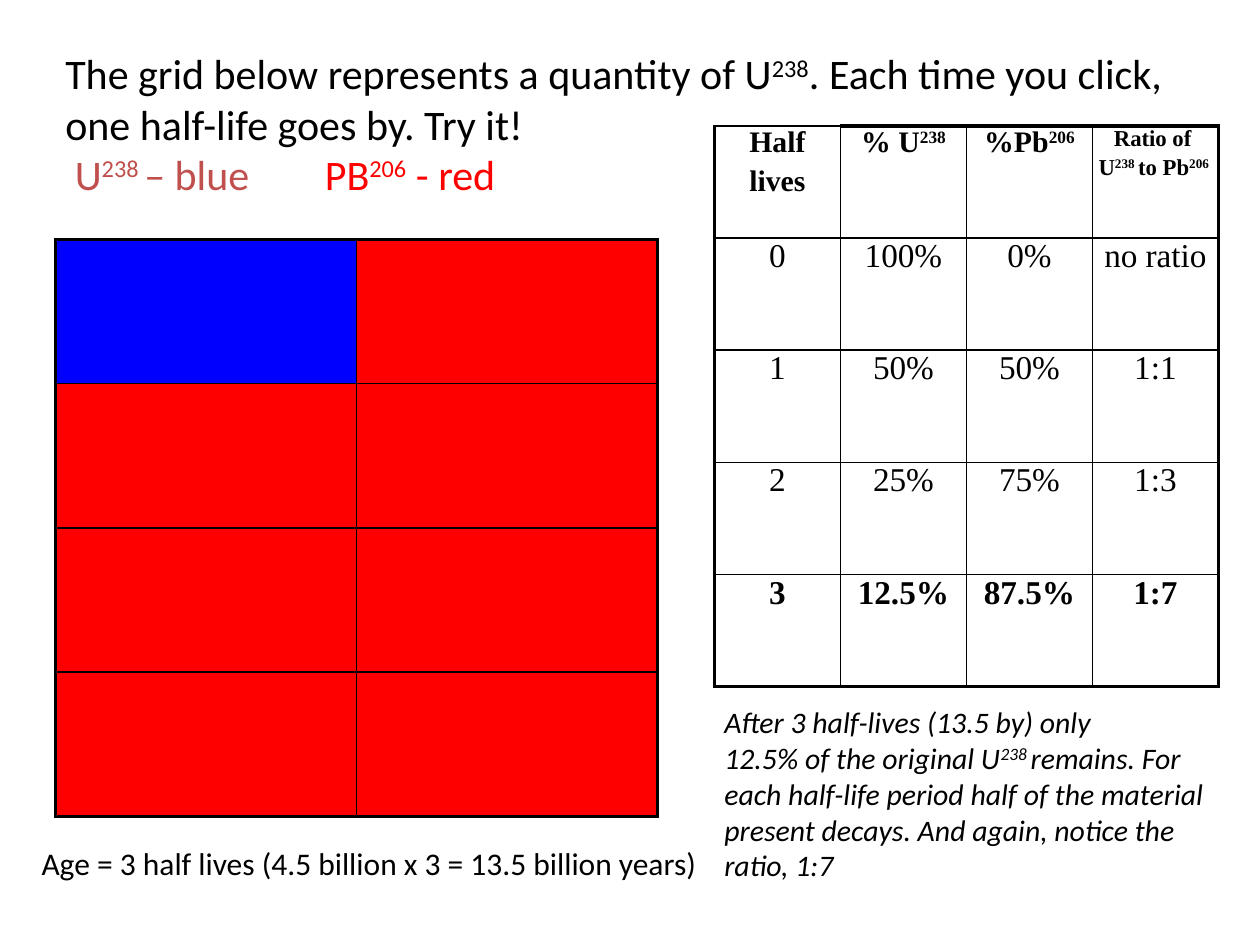
from lxml import etree
from pptx import Presentation
from pptx.dml.color import RGBColor
from pptx.enum.text import PP_ALIGN
from pptx.oxml.ns import qn
from pptx.util import Inches, Pt

CENTER = PP_ALIGN.CENTER
THEME = {
    "sans": "Calibri", "serif": "Times New Roman",
    "black": "000000", "muted": "C0504D", "red": "FF0000", "blue": "0000FF",
    "title": 24, "age": 18, "note": 17,
    "head": 17, "ratio_head": 13, "body": 19,
    "thin": 1, "thick": 2.25,
}
UNIT = Inches(10) // 100

INTRO = [
    "The grid below represents a quantity of U^238^. Each time you click,",
    "one half-life goes by. Try it!",
    [(" U^238 ^– blue\t", "muted"), ("PB^206^ - red", "red")],
]
NOTE = [
    "After 3 half-lives (13.5 by) only",
    "12.5% of the original U^238 ^remains. For",
    "each half-life period half of the material",
    "present decays. And again, notice the",
    "ratio, 1:7",
]
AGE = ["Age = 3 half lives (4.5 billion x 3 = 13.5 billion years)"]
HALF_LIVES = [
    ["Half\nlives", "% U^238^", "%Pb^206^", "Ratio of \nU^238 ^to Pb^206 ^"],
    ["0", "100%", "0%", "no ratio"],
    ["1", "50%", "50%", "1:1"],
    ["2", "25%", "75%", "1:3"],
    ["3", "12.5%", "87.5%", "1:7"],
]
ATOMS = [["blue", "red"]] + [["red", "red"]] * 3

INTRO_BOX = (4.2, 3.3, 90.4, 13.1)
HALF_LIVES_BOX = (56.7, 10, 40, 44.5)
NOTE_BOX = (56.5, 55.4, 40.5, 15.3)
ATOMS_BOX = (4.4, 19, 47.8, 45.8)
AGE_BOX = (2, 66.3, 55.3, 4.4)
LEGEND_TAB = 20.6


def place(box):
    return [round(v * UNIT) for v in box]


def write(tf, lines, size, font="sans", bold=False, italic=False, align=None, gap=0, tab=None):
    for i, line in enumerate(lines):
        p = tf.add_paragraph() if i else tf.paragraphs[0]
        p.alignment = align
        if i:
            p.space_before = Pt(gap)
        if tab:
            stops = etree.SubElement(p._p.get_or_add_pPr(), qn("a:tabLst"))
            etree.SubElement(stops, qn("a:tab"), pos=str(round(tab * UNIT)), algn="l")
        for text, color in [(line, "black")] if isinstance(line, str) else line:
            for k, part in enumerate(text.split("^")):
                if not part:
                    continue
                r = p.add_run()
                r.text = part
                f = r.font
                f.name, f.size, f.bold, f.italic = THEME[font], Pt(size), bold, italic
                f.color.rgb = RGBColor.from_string(THEME[color])
                if k % 2:
                    r._r.get_or_add_rPr().set("baseline", "30000")


def add_text(slide, box, lines, size, inset=(0.1, 0.05), **fmt):
    tf = slide.shapes.add_textbox(*place(box)).text_frame
    tf.word_wrap = True
    tf.margin_left = tf.margin_right = Inches(inset[0])
    tf.margin_top = tf.margin_bottom = Inches(inset[1])
    write(tf, lines, size, **fmt)


def add_border(cell, side, width):
    ln = etree.SubElement(cell._tc.get_or_add_tcPr(), qn("a:ln" + side), w=str(Pt(width)))
    fill = etree.SubElement(ln, qn("a:solidFill"))
    etree.SubElement(fill, qn("a:srgbClr"), val=THEME["black"])


def add_grid(slide, box, rows, cols, thin_top=()):
    x, y, w, h = place(box)
    table = slide.shapes.add_table(rows, cols, x, y, w, h).table
    table.first_row = table.horz_banding = False
    for row in table.rows:
        row.height = h // rows
    for col in table.columns:
        col.width = w // cols
    for i in range(rows):
        for j in range(cols):
            cell = table.cell(i, j)
            cell.margin_left = cell.margin_right = 0
            cell.margin_top = cell.margin_bottom = 0
            outer = {
                "L": j == 0, "R": j == cols - 1,
                "T": i == 0 and j not in thin_top, "B": i == rows - 1,
            }
            for side, edge in outer.items():
                add_border(cell, side, THEME["thick" if edge else "thin"])
            cell.fill.background()
    return table


def main():
    prs = Presentation()
    prs.slide_width, prs.slide_height = 100 * UNIT, 75 * UNIT
    slide = prs.slides.add_slide(prs.slide_layouts[6])

    add_text(slide, INTRO_BOX, INTRO, THEME["title"], tab=LEGEND_TAB)

    last = len(HALF_LIVES) - 1
    table = add_grid(slide, HALF_LIVES_BOX, len(HALF_LIVES), len(HALF_LIVES[0]), thin_top=(0,))
    for i, row in enumerate(HALF_LIVES):
        for j, text in enumerate(row):
            head = "ratio_head" if j == len(row) - 1 else "head"
            size = THEME["body" if i else head]
            write(table.cell(i, j).text_frame, text.split("\n"), size, font="serif",
                  bold=i in (0, last), align=CENTER, gap=round(0.2 * size, 1))

    add_text(slide, NOTE_BOX, NOTE, THEME["note"], italic=True)

    table = add_grid(slide, ATOMS_BOX, len(ATOMS), len(ATOMS[0]))
    for i, row in enumerate(ATOMS):
        for j, color in enumerate(row):
            fill = table.cell(i, j).fill
            fill.solid()
            fill.fore_color.rgb = RGBColor.from_string(THEME[color])

    add_text(slide, AGE_BOX, AGE, THEME["age"], inset=(0.13, 0.07))
    prs.save("out.pptx")


if __name__ == "__main__":
    main()
